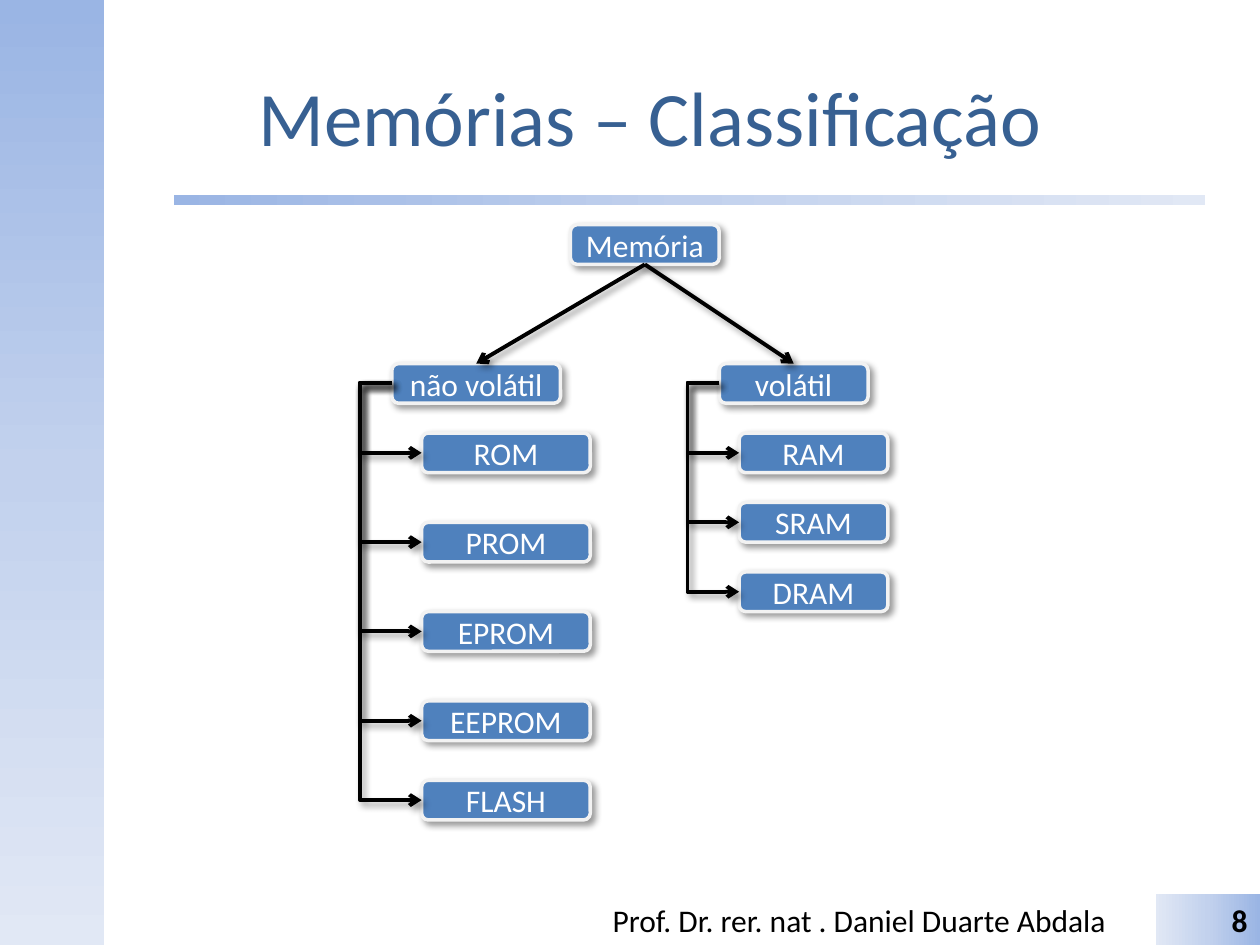
from copy import deepcopy
from dataclasses import dataclass

from lxml import etree
from pptx import Presentation
from pptx import util as u
from pptx.dml.color import RGBColor
from pptx.enum import shapes, text
from pptx.oxml import ns, parse_xml

Cm, Pt = u.Cm, u.Pt
RECT = shapes.MSO_SHAPE.RECTANGLE
ROUND = shapes.MSO_SHAPE.ROUNDED_RECTANGLE
TOP, LEFT, BOTTOM = 0, 1, 2


@dataclass(frozen=True)
class Theme:
    font: str = "Calibri"
    heading: str = "376092"
    ink: str = "000000"
    node: str = "4F81BD"
    node_edge: str = "F2F2F2"
    node_text: str = "FFFFFF"
    gradient: tuple = ("9AB5E4", "C2D1ED", "E1E8F5")
    title_size: int = 44
    body_size: int = 18
    edge_width: float = 2
    arrow_width: float = 2.25


THEME = Theme()
SHADOW = parse_xml(
    f'<a:effectLst {ns.nsdecls("a")}><a:outerShdw blurRad="{Pt(4)}" dist="{Pt(3)}" '
    f'dir="2700000" algn="tl" rotWithShape="0"><a:srgbClr val="{THEME.ink}">'
    '<a:alpha val="40000"/></a:srgbClr></a:outerShdw></a:effectLst>')


def write(box, words, align, **formats):
    """Put one formatted paragraph into a shape or text box."""
    frame = box.text_frame
    frame.word_wrap = True
    frame.vertical_anchor = text.MSO_ANCHOR.MIDDLE
    para = frame.paragraphs[0]
    para.alignment = align
    span = para.add_run()
    span.text = words
    color = formats.pop("color", THEME.ink)
    values = {"name": THEME.font, "size": Pt(THEME.body_size), **formats}
    for name, value in values.items():
        setattr(span.font, name, value)
    span.font.color.rgb = RGBColor.from_string(color)


def add_text(page, area, words, align, **formats):
    box = page.shapes.add_textbox(*map(Cm, area))
    write(box, words, align, **formats)


def add_gradient_bar(page, area, angle, kind=RECT):
    """Add a borderless bar shaded along the given clockwise angle."""
    bar = page.shapes.add_shape(kind, *map(Cm, area))
    bar.shadow.inherit = False
    bar.line.fill.background()
    stops = "".join(
        f'<a:gs pos="{i * 50000}"><a:srgbClr val="{color}"/></a:gs>'
        for i, color in enumerate(THEME.gradient))
    fill = parse_xml(
        f'<a:gradFill {ns.nsdecls("a")} rotWithShape="1"><a:gsLst>{stops}</a:gsLst>'
        f'<a:lin ang="{angle * 60000}" scaled="0"/></a:gradFill>')
    bar.element.spPr.find(ns.qn("a:prstGeom")).addnext(fill)
    return bar


def add_node(page, left, top, width, label):
    node = page.shapes.add_shape(ROUND, Cm(left), Cm(top), Cm(width), Cm(0.8))
    node.fill.solid()
    node.fill.fore_color.rgb = RGBColor.from_string(THEME.node)
    node.line.color.rgb = RGBColor.from_string(THEME.node_edge)
    node.line.width = Pt(THEME.edge_width)
    node.element.spPr.append(deepcopy(SHADOW))
    write(node, label, text.PP_ALIGN.CENTER, color=THEME.node_text)
    return node


def add_arrow(page, kind, start, start_side, end, end_side):
    arrow = page.shapes.add_connector(kind, 0, 0, 0, 0)
    arrow.begin_connect(start, start_side)
    arrow.end_connect(end, end_side)
    arrow.line.color.rgb = RGBColor.from_string(THEME.ink)
    arrow.line.width = Pt(THEME.arrow_width)
    etree.SubElement(arrow.line._get_or_add_ln(), ns.qn("a:tailEnd"), type="arrow")
    arrow.element.spPr.append(deepcopy(SHADOW))
    return arrow


def add_branch(page, left, top, width, label, indent, children):
    """Add a branch head with its children, given as (label, offset) pairs."""
    head = add_node(page, left, top, width, label)
    for name, offset in children:
        child = add_node(page, left + indent, top + offset, width, name)
        arrow = add_arrow(page, shapes.MSO_CONNECTOR.ELBOW, head, LEFT, child, LEFT)
        # The bend runs 0.64 cm left of the branch head
        guides = arrow.element.spPr.find(ns.qn("a:prstGeom")).get_or_add_avLst()
        bend = round(-0.64 / indent * 100000)
        etree.SubElement(guides, ns.qn("a:gd"), name="adj1", fmla=f"val {bend}")
    return head


def add_frame(page, width, height):
    """Side band, title with rule, and footer."""
    band = 2.1
    add_gradient_bar(page, (0, 0, band, height), 90)
    rule = add_gradient_bar(page, (3.5, 3.93, 20.8, 0.2), 0, ROUND)
    rule.adjustments[0] = 0
    add_text(page, (band, 0.75, 22.02, 3.18), "Memórias – Classificação",
             text.PP_ALIGN.CENTER, size=Pt(THEME.title_size), color=THEME.heading)
    foot = height - 1.02
    add_text(page, (12.1, foot, 10.64, 1.02),
             "Prof. Dr. rer. nat . Daniel Duarte Abdala", text.PP_ALIGN.LEFT)
    number = add_gradient_bar(page, (width - band, foot, band, 1.02), 180)
    write(number, "8", text.PP_ALIGN.RIGHT, bold=True)


def add_tree(page, left, top):
    """Memory classification tree, with the root's children 2.8 cm below it."""
    root = add_node(page, left + 3.6, top, 3, "Memória")
    fixed = [(name, 1.4 + 1.8 * i)
             for i, name in enumerate(("ROM", "PROM", "EPROM", "EEPROM"))]
    fixed.append(("FLASH", 8.4))
    volatile = [(name, 1.4 * i) for i, name in enumerate(("RAM", "SRAM", "DRAM"), 1)]
    level = top + 2.8
    heads = (add_branch(page, left, level, 3.4, "não volátil", 0.6, fixed),
             add_branch(page, left + 6.6, level, 3, "volátil", 0.4, volatile))
    for head in heads:
        add_arrow(page, shapes.MSO_CONNECTOR.STRAIGHT, root, BOTTOM, head, TOP)


def main():
    width, height = 25.4, 19.05
    deck = Presentation()
    deck.slide_width, deck.slide_height = Cm(width), Cm(height)
    page = deck.slides.add_slide(deck.slide_layouts[6])
    add_frame(page, width, height)
    add_tree(page, 7.9, 4.53)
    deck.save("out.pptx")


if __name__ == "__main__":
    main()
